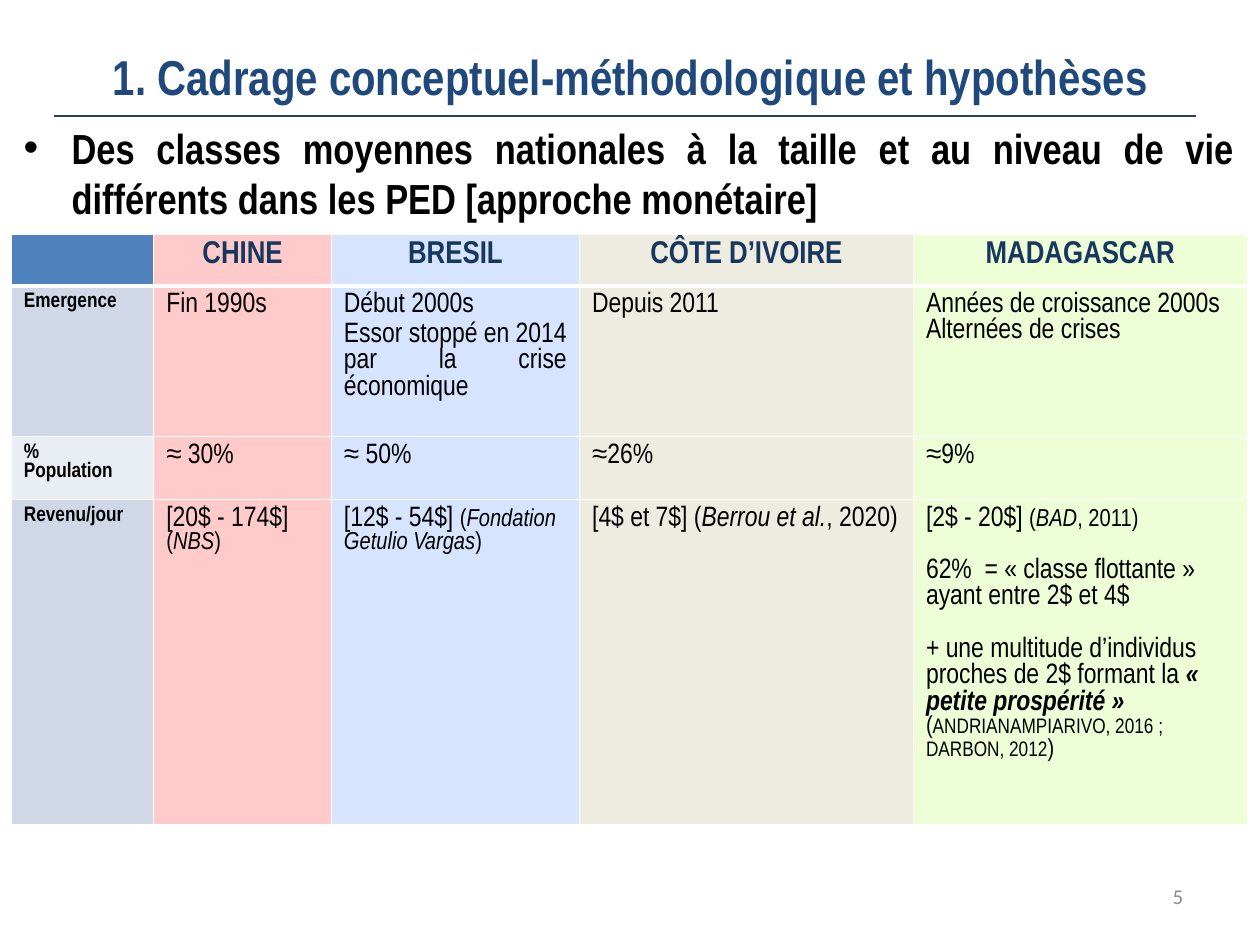
"""Build a slide comparing the national middle classes of four countries."""
from lxml.etree import SubElement
from pptx import Presentation
from pptx.dml.color import RGBColor
from pptx.enum.shapes import MSO_CONNECTOR
from pptx.enum.text import MSO_ANCHOR, PP_ALIGN
from pptx.oxml.ns import qn
from pptx.util import Inches, Pt

BLACK = RGBColor(0x00, 0x00, 0x00)
WHITE = RGBColor(0xFF, 0xFF, 0xFF)
GREY = RGBColor(0x8C, 0x8C, 0x8C)
TITLE_BLUE = RGBColor(0x1F, 0x49, 0x7D)
RULE_BLUE = RGBColor(0x25, 0x40, 0x61)
HEADER_BLUE = RGBColor(0x17, 0x37, 0x5E)
CORNER_BLUE = RGBColor(0x4F, 0x81, 0xBD)
LABEL_DARK = RGBColor(0xD0, 0xD8, 0xE8)
LABEL_LIGHT = RGBColor(0xE9, 0xED, 0xF4)
PINK = RGBColor(0xFF, 0xCA, 0xCA)
PALE_BLUE = RGBColor(0xD6, 0xE4, 0xFF)
BEIGE = RGBColor(0xEE, 0xEC, 0xE1)
PALE_GREEN = RGBColor(0xEE, 0xFE, 0xD7)


def add_span(para, text, size=16, bold=False, italic=False, color=BLACK, font="Arial Narrow"):
    span = para.add_run()
    span.text = text
    span.font.name = font
    span.font.size = Pt(size)
    span.font.bold = bold
    span.font.italic = italic
    span.font.color.rgb = color


def add_border(cell, side, width):
    properties = cell._tc.get_or_add_tcPr()
    border = SubElement(properties, qn(f"a:{side}"), w=str(Pt(width)))
    SubElement(SubElement(border, qn("a:solidFill")), qn("a:srgbClr"), val=str(WHITE))


deck = Presentation()
deck.slide_width, deck.slide_height = Inches(10), Inches(7.5)
page = deck.slides.add_slide(deck.slide_layouts[5])

title = page.shapes.title
title.left, title.top, title.width, title.height = Inches(0), Inches(0.3), Inches(10), Inches(0.61)
title.text_frame.vertical_anchor = MSO_ANCHOR.MIDDLE
para = title.text_frame.paragraphs[0]
para.alignment = PP_ALIGN.CENTER
add_span(para, "1. Cadrage conceptuel-méthodologique et hypothèses", size=28, bold=True, color=TITLE_BLUE)

rule = page.shapes.add_connector(MSO_CONNECTOR.STRAIGHT, Inches(0.43), Inches(0.92), Inches(9.49), Inches(0.92))
rule.line.color.rgb = RULE_BLUE
rule.line.width = Pt(0.75)
SubElement(rule.element.spPr, qn("a:effectLst"))

box = page.shapes.add_textbox(Inches(0.09), Inches(0.92), Inches(9.8), Inches(6.14))
box.text_frame.word_wrap = True
para = box.text_frame.paragraphs[0]
para.alignment = PP_ALIGN.JUSTIFY
para.space_before = Pt(4.8)
add_span(para, "Des classes moyennes nationales à la taille et au niveau de vie différents "
         "dans les PED [approche monétaire]", size=24, bold=True)
properties = para._p.get_or_add_pPr()
properties.set("marL", str(Inches(0.38)))
properties.set("indent", str(-Inches(0.38)))
SubElement(properties, qn("a:buFont"), typeface="Arial")
SubElement(properties, qn("a:buChar"), char="•")

column_widths = [1.13, 1.41, 1.97, 2.65, 2.65]
row_heights = [0.41, 1.17, 0.42, 2.13]
country_fills = [PINK, PALE_BLUE, BEIGE, PALE_GREEN]
label_fills = [CORNER_BLUE, LABEL_DARK, LABEL_LIGHT, LABEL_DARK]
header = {"size": 18, "bold": True, "color": HEADER_BLUE}
label = {"size": 12, "bold": True}
small = {"size": 14}
source = {"size": 14, "italic": True}

rows = [
    [[],
     [[("CHINE", header)]],
     [[("BRESIL", header)]],
     [[("CÔTE D’IVOIRE", header)]],
     [[("MADAGASCAR", header)]]],
    [[[("Emergence", label)]],
     [[("Fin 1990s", {})]],
     [[("Début 2000s", {})], [("Essor stoppé en 2014 par la crise économique", {})]],
     [[("Depuis 2011", {})]],
     [[("Années de croissance 2000s", {})], [("Alternées de crises", {})]]],
    [[[("%", label)], [("Population", label)]],
     [[("≈ 30%", {})]],
     [[("≈ 50%", {})]],
     [[("≈26%", {})]],
     [[("≈9%", {})]]],
    [[[("Revenu/jour", label)]],
     [[("[20$ - 174$] ", {}), ("(", small), ("NBS", source), (")", small)]],
     [[("[12$ - 54$] ", {}), ("(", small), ("Fondation Getulio Vargas", source), (")", small)]],
     [[("[4$ et 7$] (", {}), ("Berrou et al.", {"italic": True}), (", 2020)", {})]],
     [[("[2$ - 20$] ", {}), ("(", small), ("BAD", source), (", 2011)", small)],
      [("62%  = « classe flottante » ayant entre 2$ et 4$", {})],
      [("+ une multitude d’individus proches de 2$ formant la ", {}),
       ("« petite prospérité » ", {"bold": True, "italic": True}), ("(", small),
       ("ANDRIANAMPIARIVO, 2016 ; DARBON, 2012", {"size": 12}), (")", small)]]],
]

frame = page.shapes.add_table(4, 5, Inches(0.09), Inches(1.86), Inches(9.81), Inches(sum(row_heights)))
table = frame.table
for column, width in zip(table.columns, column_widths):
    column.width = Inches(width)
for row, height in zip(table.rows, row_heights):
    row.height = Inches(height)

row_alignments = [PP_ALIGN.CENTER, PP_ALIGN.JUSTIFY, PP_ALIGN.LEFT, PP_ALIGN.LEFT]
for row_index, row in enumerate(rows):
    fills = [label_fills[row_index], *country_fills]
    for column_index, paragraphs in enumerate(row):
        cell = table.cell(row_index, column_index)
        for side in ("lnL", "lnR", "lnT", "lnB"):
            header_edge = (row_index, side) in ((0, "lnB"), (1, "lnT"))
            add_border(cell, side, 3 if header_edge else 1)
        cell.fill.solid()
        cell.fill.fore_color.rgb = fills[column_index]
        for index, spans in enumerate(paragraphs):
            para = cell.text_frame.add_paragraph() if index else cell.text_frame.paragraphs[0]
            para.alignment = row_alignments[row_index]
            para.line_spacing = 1.0
            if row_index == 1 and column_index in (0, 2):
                para.space_before = para.space_after = Pt(1)
            elif row_index == 3 and index:
                para.space_before = Pt(15)
            for text, style in spans:
                add_span(para, text, **style)

number = page.shapes.add_textbox(Inches(7.16), Inches(6.91), Inches(2.33), Inches(0.4))
number.text_frame.word_wrap = True
number.text_frame.vertical_anchor = MSO_ANCHOR.MIDDLE
para = number.text_frame.paragraphs[0]
para.alignment = PP_ALIGN.RIGHT
add_span(para, "5", size=12, color=GREY, font="Calibri")

deck.save("out.pptx")
